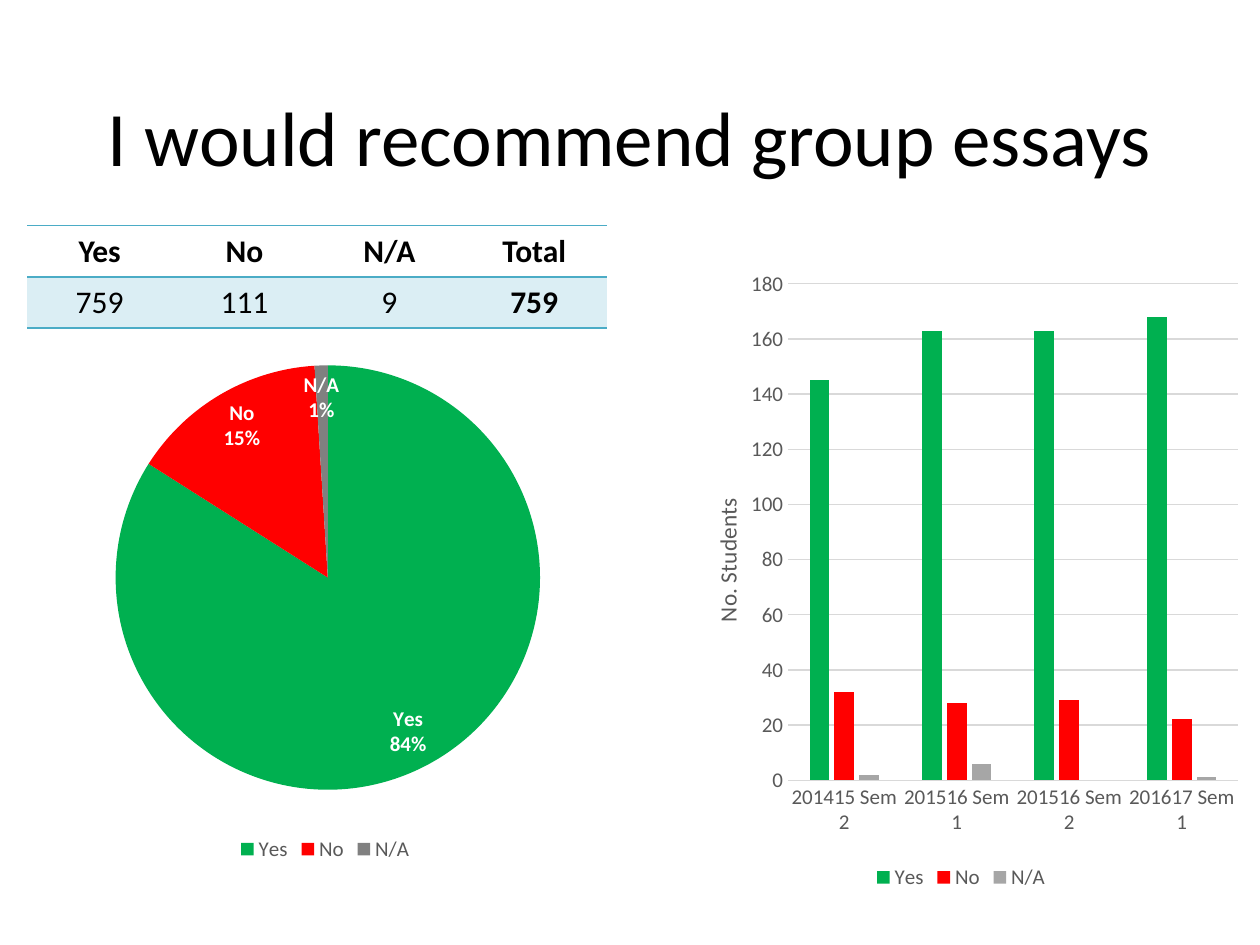
import pptx
import pptx.chart.data
import pptx.dml.color
import pptx.enum.chart
import pptx.enum.text
import pptx.oxml
import pptx.oxml.ns
import pptx.util

Cm = pptx.util.Cm
Pt = pptx.util.Pt
RGBColor = pptx.dml.color.RGBColor
qn = pptx.oxml.ns.qn
ChartType = pptx.enum.chart.XL_CHART_TYPE

BLACK = RGBColor(0x00, 0x00, 0x00)
WHITE = RGBColor(0xFF, 0xFF, 0xFF)
GREEN = RGBColor(0x00, 0xB0, 0x50)
RED = RGBColor(0xFF, 0x00, 0x00)
DARK_GREY = RGBColor(0x80, 0x80, 0x80)
LIGHT_GREY = RGBColor(0xA6, 0xA6, 0xA6)
GRID_GREY = RGBColor(0xD9, 0xD9, 0xD9)
LABEL_GREY = RGBColor(0x59, 0x59, 0x59)
TEAL = RGBColor(0x4B, 0xAC, 0xC6)
PALE_TEAL = RGBColor(0xDB, 0xEE, 0xF4)

ANSWERS = ["Yes", "No", "N/A"]
UNSTYLED_TABLE = "{2D5ABB26-0587-4C30-8999-92F81FD0307C}"


class Deck:
    font_name = "Calibri"

    def __init__(self, width, height):
        self.presentation = pptx.Presentation()
        self.presentation.slide_width = width
        self.presentation.slide_height = height
        self.slide = self.presentation.slides.add_slide(self.presentation.slide_layouts[6])

    def style(self, font, size, color, bold=False):
        font.name = self.font_name
        font.size = Pt(size)
        font.bold = bold
        font.color.rgb = color

    def add_run(self, paragraph, wording, size, color, bold=False):
        run = paragraph.add_run()
        run.text = wording
        self.style(run.font, size, color, bold)

    def title(self, wording, left, top, width, height):
        frame = self.slide.shapes.add_textbox(left, top, width, height).text_frame
        frame.word_wrap = True
        frame.vertical_anchor = pptx.enum.text.MSO_ANCHOR.MIDDLE
        heading = frame.paragraphs[0]
        heading.alignment = pptx.enum.text.PP_ALIGN.CENTER
        heading.line_spacing = 0.9
        self.add_run(heading, wording, 44, BLACK)

    def border(self, cell, tag):
        line = pptx.oxml.parse_xml(
            f'<a:{tag} {pptx.oxml.ns.nsdecls("a")} w="{Pt(1)}"><a:solidFill>'
            f'<a:srgbClr val="{TEAL}"/></a:solidFill></a:{tag}>')
        cell._tc.get_or_add_tcPr().insert(0, line)

    def table(self, rows, left, top, width, height):
        grid = self.slide.shapes.add_table(
            len(rows), len(rows[0]), left, top, width, height).table
        grid._tbl.tblPr.find(qn("a:tableStyleId")).text = UNSTYLED_TABLE
        for r, row in enumerate(rows):
            for c, wording in enumerate(row):
                cell = grid.cell(r, c)
                paragraph = cell.text_frame.paragraphs[0]
                paragraph.alignment = pptx.enum.text.PP_ALIGN.CENTER
                self.add_run(paragraph, wording, 18, BLACK, r == 0 or c == len(row) - 1)
                if r == 0:
                    cell.fill.background()
                else:
                    cell.fill.solid()
                    cell.fill.fore_color.rgb = PALE_TEAL
                self.border(cell, "lnB")
                self.border(cell, "lnT")

    def place(self, parent, index, **fractions):
        for old in parent.findall(qn("c:layout")):
            parent.remove(old)
        target = '<c:layoutTarget val="inner"/>' if "w" in fractions else ""
        modes = "".join(f'<c:{key}Mode val="edge"/>' for key in ("x", "y"))
        values = "".join(f'<c:{key} val="{value}"/>' for key, value in fractions.items())
        parent.insert(index, pptx.oxml.parse_xml(
            f'<c:layout {pptx.oxml.ns.nsdecls("c")}><c:manualLayout>'
            f'{target}{modes}{values}</c:manualLayout></c:layout>'))

    def chart(self, kind, categories, series, box, plot_area):
        data = pptx.chart.data.CategoryChartData()
        data.categories = categories
        for name, values in series:
            data.add_series(name, values)
        chart = self.slide.shapes.add_chart(kind, *box, data).chart
        chart.has_title = False
        self.style(chart.font, 10, BLACK)
        chart.has_legend = True
        chart.legend.position = pptx.enum.chart.XL_LEGEND_POSITION.BOTTOM
        chart.legend.include_in_layout = False
        self.style(chart.legend.font, 12, LABEL_GREY)
        self.place(chart._chartSpace.chart.plotArea, 0, **plot_area)
        chart.plots[0].vary_by_categories = kind == ChartType.PIE
        return chart

    def paint(self, parts, colors):
        for part, color in zip(parts, colors):
            part.format.fill.solid()
            part.format.fill.fore_color.rgb = color

    def pie(self, categories, values, colors, box, plot_area):
        plot = self.chart(ChartType.PIE, categories, [("Series 1", values)],
                          box, plot_area).plots[0]
        points = plot.series[0].points
        self.paint([points[i] for i in range(len(values))], colors)
        plot.has_data_labels = True
        labels = plot.data_labels
        labels.show_value = False
        labels.show_category_name = True
        labels.show_percentage = True
        labels.position = pptx.enum.chart.XL_LABEL_POSITION.INSIDE_END
        self.style(labels.font, 12, WHITE, True)
        separator = pptx.oxml.parse_xml(
            f'<c:separator {pptx.oxml.ns.nsdecls("c")}>\n</c:separator>')
        labels._element.find(qn("c:showBubbleSize")).addnext(separator)

    def columns(self, categories, series, colors, axis_title, box, plot_area):
        chart = self.chart(ChartType.COLUMN_CLUSTERED, categories, series, box, plot_area)
        plot = chart.plots[0]
        plot.gap_width = 219
        plot.overlap = -27
        self.paint(plot.series, colors)
        for axis in (chart.category_axis, chart.value_axis):
            axis.major_tick_mark = pptx.enum.chart.XL_TICK_MARK.NONE
            self.style(axis.tick_labels.font, 12, LABEL_GREY)
        students = chart.value_axis
        students.minimum_scale = 0
        students.maximum_scale = 180
        students.major_unit = 20
        students.has_major_gridlines = True
        students.format.line.fill.background()
        for ruled in (chart.category_axis, students.major_gridlines):
            ruled.format.line.color.rgb = GRID_GREY
            ruled.format.line.width = Pt(0.75)
        frame = students.axis_title.text_frame
        self.add_run(frame.paragraphs[0], axis_title, 13.3, LABEL_GREY)
        frame._txBody.bodyPr.set("rot", "-5400000")
        frame._txBody.bodyPr.set("vert", "horz")
        self.place(students.axis_title._element, 1, x=0.06, y=0.37)


def main():
    deck = Deck(Cm(25.4), Cm(19.05))
    deck.title("I would recommend group essays", Cm(1.75), Cm(1.02), Cm(21.9), Cm(3.68))
    deck.columns(
        ["201415 Sem 2", "201516 Sem 1", "201516 Sem 2", "201617 Sem 1"],
        zip(ANSWERS, [(145, 163, 163, 168), (32, 28, 29, 22), (2, 6, None, 1)]),
        [GREEN, RED, LIGHT_GREY], "No. Students",
        (Cm(13.56), Cm(5.21), Cm(11.63), Cm(12.83)),
        dict(x=0.2, y=0.04, w=0.78, h=0.78))
    deck.pie(ANSWERS, (84, 15, 1), [GREEN, RED, DARK_GREY],
             (Cm(1.12), Cm(7.16), Cm(10.87), Cm(10.31)),
             dict(x=0.11, y=0.02, w=0.79, h=0.83))
    deck.table([ANSWERS + ["Total"], ["759", "111", "9", "759"]],
               Cm(0.55), Cm(4.55), Cm(11.68), Cm(2.06))
    deck.presentation.save("out.pptx")


if __name__ == "__main__":
    main()
